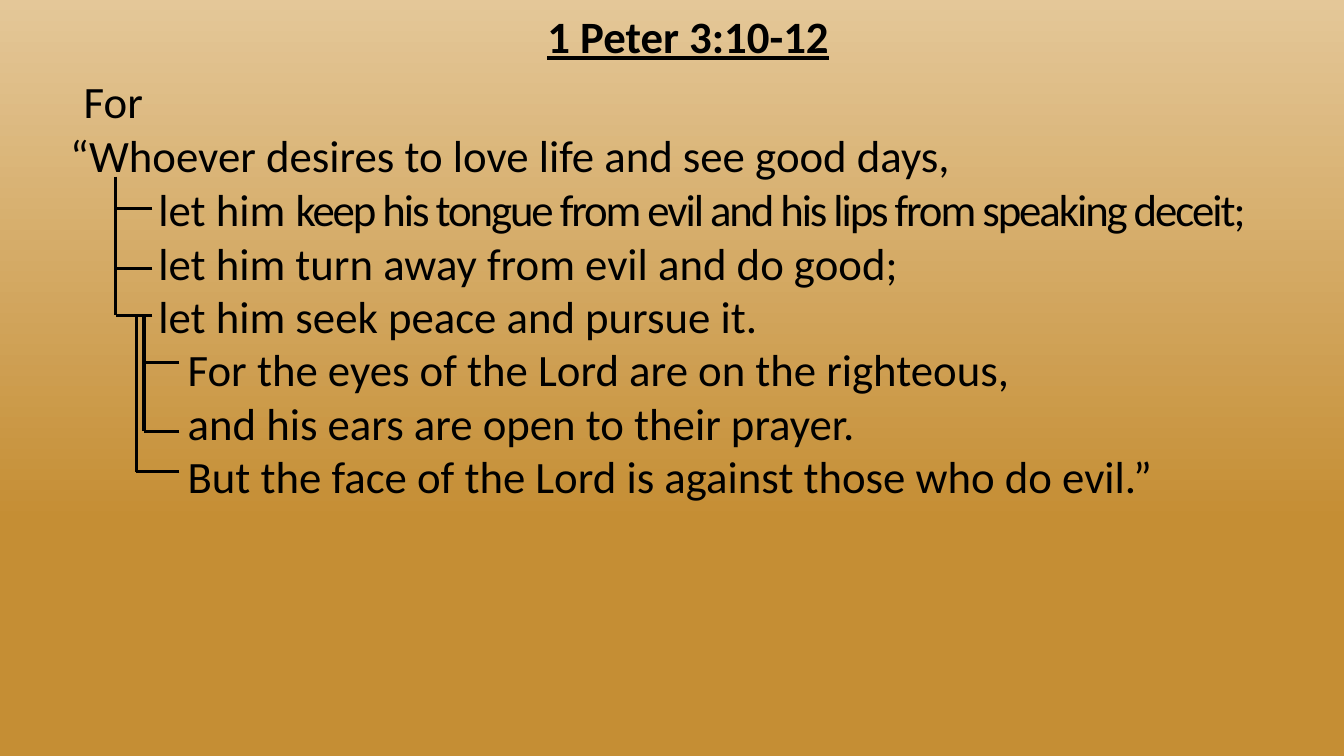
import pptx
import pptx.dml.color
import pptx.enum.shapes
import pptx.enum.text
import pptx.oxml
import pptx.util
from pptx.util import Cm


def color(code):
    return pptx.dml.color.RGBColor.from_string(code)


class VerseSlide:
    font = "Calibri"
    size = pptx.util.Pt(32)
    ink = "000000"
    stroke = pptx.util.Pt(2.25)

    def __init__(self, deck):
        self.page = deck.slides.add_slide(deck.slide_layouts[6])

    def background(self, stops, angle):
        fill = self.page.background.fill
        fill.gradient()
        fill.gradient_angle = angle
        for stop, (position, code) in zip(fill.gradient_stops, stops):
            stop.position = position
            stop.color.rgb = color(code)

    def box(self, left, top, width, height):
        box = self.page.shapes.add_textbox(Cm(left), Cm(top), Cm(width), Cm(height))
        box.text_frame.word_wrap = True
        box.text_frame.auto_size = pptx.enum.text.MSO_AUTO_SIZE.SHAPE_TO_FIT_TEXT
        return box.text_frame

    def span(self, para, text, bold=False, underline=False, spacing=0):
        span = para.add_run()
        span.text = text
        span.font.name = self.font
        span.font.size = self.size
        span.font.color.rgb = color(self.ink)
        span.font.bold = bold
        span.font.underline = underline
        if spacing:
            span.font._element.set("spc", str(round(spacing * 100)))

    def title(self, text, *place):
        para = self.box(*place).paragraphs[0]
        para.alignment = pptx.enum.text.PP_ALIGN.CENTER
        self.span(para, text, bold=True, underline=True)

    def opening(self, lines, *place):
        frame = self.box(*place)
        for number, (text, indent) in enumerate(lines):
            para = frame.add_paragraph() if number else frame.paragraphs[0]
            self.indent(para, indent)
            self.span(para, text)

    def stanza(self, lines, indent, *place):
        para = self.box(*place).paragraphs[0]
        self.indent(para, indent)
        for number, line in enumerate(lines):
            if number:
                para.add_line_break()
            for text, spacing in line:
                self.span(para, text, spacing=spacing)

    def indent(self, para, distance):
        para._p.get_or_add_pPr().set("marL", str(Cm(distance)))

    def line(self, group, start, end):
        line = group.shapes.add_connector(
            pptx.enum.shapes.MSO_CONNECTOR.STRAIGHT, *map(Cm, start + end))
        line.line.color.rgb = color(self.ink)
        line.line.width = self.stroke
        line._element.spPr.append(pptx.oxml.parse_xml(
            '<a:effectLst xmlns:a="http://schemas.openxmlformats.org/drawingml/2006/main"/>'))

    def bracket(self, stem, tip, top, branches):
        group = self.page.shapes.add_group_shape()
        self.line(group, (stem, top), (stem, max(branches)))
        for level in branches:
            self.line(group, (tip, level), (stem, level))


def main():
    deck = pptx.Presentation()
    deck.slide_width, deck.slide_height = Cm(33.87), Cm(19.05)
    slide = VerseSlide(deck)
    slide.background([(0, "E4C798"), (0.69, "C58E34")], 270)

    left, width = 1.52, 31.62
    slide.opening([("For", 0.34),
                   ("“Whoever desires to love life and see good days,", 0)],
                  left, 1.73, width, 3)

    peace = 7.95
    slide.bracket(2.92, 3.84, 4.45, [peace, 5.26, 6.76])
    slide.bracket(3.63, 4.52, peace, [10.87, 9.14])
    slide.bracket(3.43, 4.52, peace, [11.89])

    slide.title("1 Peter 3:10-12", 10.69, 0.1, 13.31, 1.63)
    slide.stanza([
        [("let him ", 0),
         ("keep his tongue from evil and his lips from speaking deceit;", -1.5)],
        [("let him turn away from evil and do good;", 0)],
        [("let him seek peace and pursue it.", 0)],
    ], 2.22, left, 4.45, width, 4.37)
    slide.stanza([
        [("For the eyes of the Lord are on the righteous,", 0)],
        [("and his ears are open to their prayer.", 0)],
        [("But the face of the Lord is against those who do evil.”", 0)],
    ], 2.96, left, 8.48, width, 4.37)
    deck.save("out.pptx")


if __name__ == "__main__":
    main()
